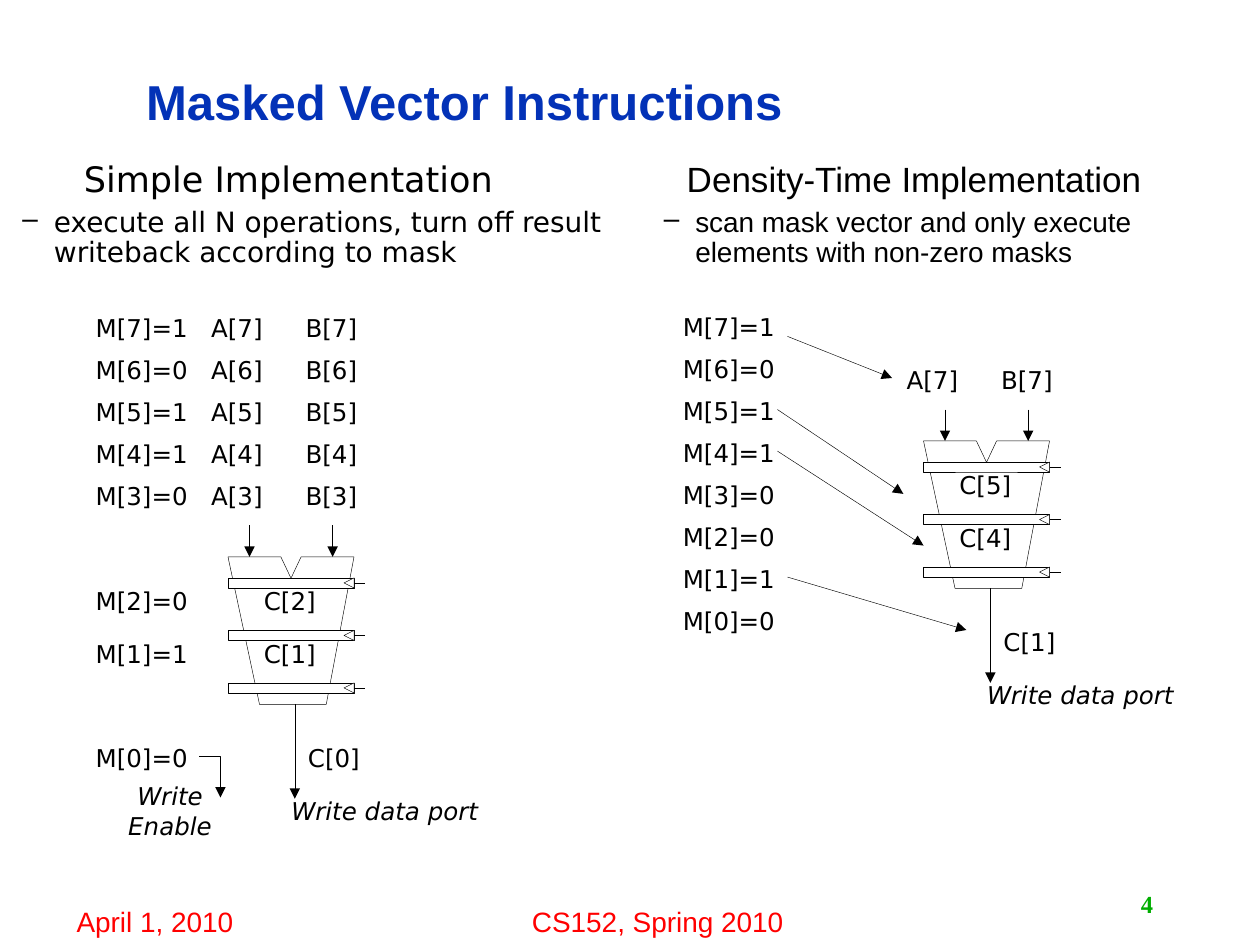
from dataclasses import dataclass

from lxml.etree import SubElement
from pptx import Presentation
from pptx.dml.color import RGBColor
from pptx.enum.shapes import MSO_CONNECTOR as Link, MSO_SHAPE as Preset
from pptx.enum.text import MSO_ANCHOR as Anchor, MSO_AUTO_SIZE as Fit, PP_ALIGN as Align
from pptx.oxml.ns import qn
from pptx.util import Inches, Pt


@dataclass(frozen=True)
class Theme:
    ink: str = "000000"
    paper: str = "FFFFFF"
    title: str = "0332B7"
    footer: str = "FF0000"
    number: str = "00AE00"
    sans: str = "Arial"
    label_font: str = "DejaVu Sans"
    serif: str = "Times New Roman"
    title_size: int = 28
    heading_size: int = 20
    body_size: int = 16
    label_size: int = 14
    hairline: float = 0.25


theme = Theme()


def write(shapes, text, at=None, *, shape=None, font=theme.label_font,
          size=theme.label_size, color=theme.ink, bold=False, italic=False,
          align=Align.CENTER, anchor=Anchor.MIDDLE, wrap=False, grow=True,
          spacing=None, before=None, margin=0, hanging=0, bullet=None, level=0):
    """Write one paragraph in a new box, or add it to the given shape."""
    shape = shape or shapes.add_textbox(*map(Inches, at))
    frame = shape.text_frame
    frame.word_wrap = wrap
    frame.auto_size = Fit.SHAPE_TO_FIT_TEXT if grow else Fit.NONE
    frame.vertical_anchor = anchor
    paragraph = frame.add_paragraph() if frame.text else frame.paragraphs[0]
    paragraph.alignment, paragraph.level = align, level
    paragraph.line_spacing, paragraph.space_before = spacing, before
    properties = paragraph._p.get_or_add_pPr()
    if margin:
        properties.set("marL", str(Inches(margin)))
        properties.set("indent", str(Inches(-hanging)))
    if bullet:
        SubElement(properties, qn("a:buChar")).set("char", bullet)
    run = paragraph.add_run()
    run.text = text
    run.font.name, run.font.size = font, Pt(size)
    run.font.bold, run.font.italic = bold, italic
    run.font.color.rgb = RGBColor.from_string(color)
    return shape


def outline(shape, *, fill=None, arrow=False):
    """Give a shape or connector a hairline, without shadow."""
    if fill:
        shape.fill.solid()
        shape.fill.fore_color.rgb = RGBColor.from_string(fill)
    elif hasattr(shape, "fill"):
        shape.fill.background()
    shape.line.color.rgb = RGBColor.from_string(theme.ink)
    shape.line.width = Pt(theme.hairline)
    properties = shape.element.spPr
    if arrow:
        SubElement(properties.find(qn("a:ln")), qn("a:tailEnd")).set("type", "triangle")
    SubElement(properties, qn("a:effectLst"))
    return shape


deck = Presentation()
deck.slide_width, deck.slide_height = Inches(10), Inches(7.5)
slide = deck.slides.add_slide(deck.slide_layouts[5])

# Title
title = slide.shapes.title
title.left, title.top, title.width, title.height = map(Inches, (1.06, 0.53, 7.83, 0.6))
write(slide.shapes, "Masked Vector Instructions", shape=title, font=theme.sans,
      size=theme.title_size, color=theme.title, bold=True, align=Align.LEFT,
      wrap=True, grow=False, spacing=0.9)

# Footer and page number
for footer, left, width in [("April 1, 2010", 0.5, 1.46), ("CS152, Spring 2010", 3.98, 2.48)]:
    write(slide.shapes, footer, (left, 7.13, width, 0.37), font=theme.sans,
          size=theme.body_size, color=theme.footer, anchor=Anchor.TOP)
write(slide.shapes, "4", (7.17, 7.01, 2.08, 0.32), font=theme.serif,
      color=theme.number, bold=True, align=Align.RIGHT, grow=False)

# Both implementations, placed from the top left corner of their pipeline
mask = {7: 1, 6: 0, 5: 1, 4: 1, 3: 0, 2: 0, 1: 1, 0: 0}
row_step = 1 / 3
label_height = 0.33
stage_tops, output_top = (0.18, 0.6), 1.43
simple_rows = [3.77 - row_step * (element - 3) for element in range(7, 2, -1)]
simple_rows += [4.42 + top for top in (*stage_tops, output_top)]
density_rows = [2.43 + row_step * row for row in range(8)]

implementations = [
    dict(x=7.33, y=3.5, operands=[7], results=["C[5]", "C[4]", "C[1]"],
         mask_left=5.31, mask_rows=density_rows,
         arrows=[(6.25, 4.58, 7.67, 5), (6.17, 3.58, 7.33, 4.33),
                 (6.17, 3.25, 7.17, 3.92), (6.25, 2.67, 7.08, 3)],
         heading="Density-Time Implementation", font=theme.sans,
         rule="scan mask vector and only execute elements with non-zero masks",
         heading_at=(4.67, 1.23, 5.17, 0.96)),
    dict(x=1.81, y=4.42, operands=[3, 4, 5, 6, 7], results=["C[2]", "C[1]", "C[0]"],
         mask_left=0.65, mask_rows=simple_rows, arrows=[],
         heading="Simple Implementation", font=theme.label_font,
         rule="execute all N operations, turn off result writeback according to mask",
         heading_at=(-0.42, 1.23, 5.42, 0.96)),
]

for part in implementations:
    diagram = slide.shapes.add_group_shape().shapes
    x, y = part["x"], part["y"]

    # Functional unit
    unit = [(0.25, 1.17), (0.78, 1.17), (1, 0), (0.58, 0), (0.5, 0.17), (0.42, 0)]
    builder = diagram.build_freeform(Inches(x), Inches(y))
    builder.add_line_segments([(Inches(x + dx), Inches(y + dy)) for dx, dy in unit])
    outline(builder.convert_to_shape())

    # Pipeline registers with clock inputs
    for stage in range(3):
        top = y + 1 / 6 + stage * 5 / 12
        register = outline(diagram.add_shape(
            Preset.RECTANGLE, Inches(x), Inches(top), Inches(1), Inches(0.08)), fill=theme.paper)
        builder = diagram.build_freeform(Inches(x + 1), Inches(top + 0.08))
        builder.add_line_segments([(Inches(x + 0.92), Inches(top + 0.04)),
                                   (Inches(x + 1), Inches(top))])
        outline(builder.convert_to_shape(), fill=theme.paper)
        clock = diagram.add_connector(Link.STRAIGHT, Inches(x + 1), Inches(top + 0.04),
                                      Inches(x + 1.09), Inches(top + 0.04))
        clock.begin_connect(register, 3)
        outline(clock)

    # Results in the stages and at the output
    places = [(0.17, stage_tops[0]), (0.17, stage_tops[1]), (0.52, output_top)]
    for result, (dx, dy) in zip(part["results"], places):
        write(diagram, result, (x + dx, y + dy, 0.64, label_height))
    write(diagram, "Write data port", (x + 0.4, y + 1.85, 1.69, label_height), italic=True)

    # Operand labels, rising from the unit's inputs
    for row, element in enumerate(part["operands"]):
        for vector, dx in [("A", -0.25), ("B", 0.5)]:
            write(diagram, f"{vector}[{element}]",
                  (x + dx, y - 0.65 - row * row_step, 0.64, label_height))

    # Mask bits
    for (element, bit), top in zip(mask.items(), part["mask_rows"]):
        write(diagram, f"M[{element}]={bit}", (part["mask_left"], top, 0.95, label_height))

    # Input, output and mask arrows
    flows = [(x + 0.53, y + 1.17, x + 0.53, y + 1.92)]
    flows += [(x + dx, y - 0.25, x + dx, y) for dx in (0.83, 0.17)]
    for ends in flows + part["arrows"]:
        outline(diagram.add_connector(Link.STRAIGHT, *map(Inches, ends)), arrow=True)

    # Heading and rule
    heading = write(diagram, part["heading"], part["heading_at"], font=part["font"],
                    size=theme.heading_size, wrap=True, spacing=0.9, margin=0.31, hanging=0.31)
    write(diagram, part["rule"], shape=heading, font=part["font"], size=theme.body_size,
          align=Align.LEFT, wrap=True, spacing=0.9, before=Pt(5), margin=0.75,
          hanging=0.25, bullet="–", level=1)

# Write enable of the simple implementation, drawn in its group
builder = diagram.build_freeform(Inches(1.58), Inches(6))
builder.add_line_segments([(Inches(1.75), Inches(6)), (Inches(1.75), Inches(6.33))], close=False)
outline(builder.convert_to_shape(), arrow=True)
write(diagram, "Write Enable", (0.63, 6.27, 1.44, label_height), italic=True)

deck.save("out.pptx")
